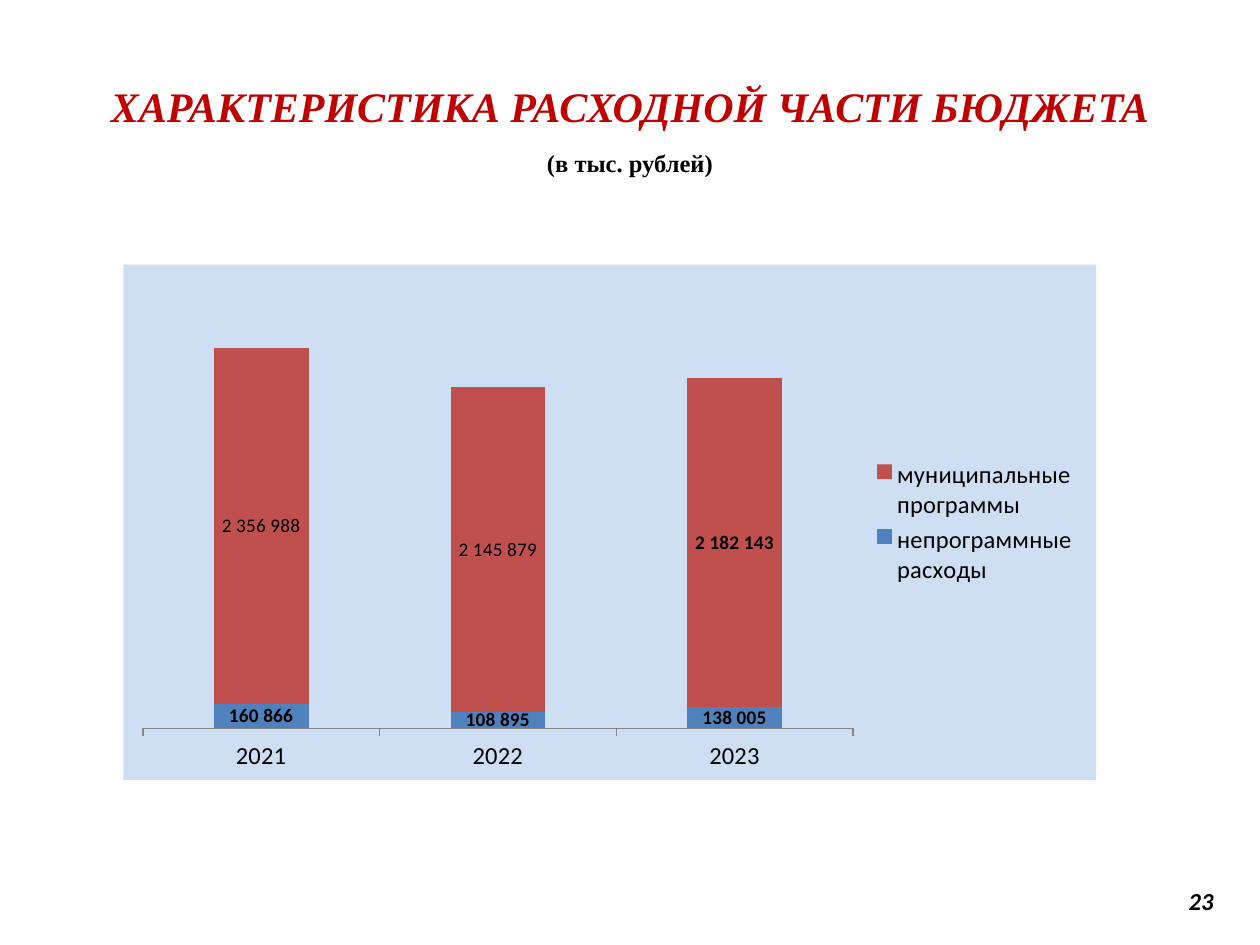
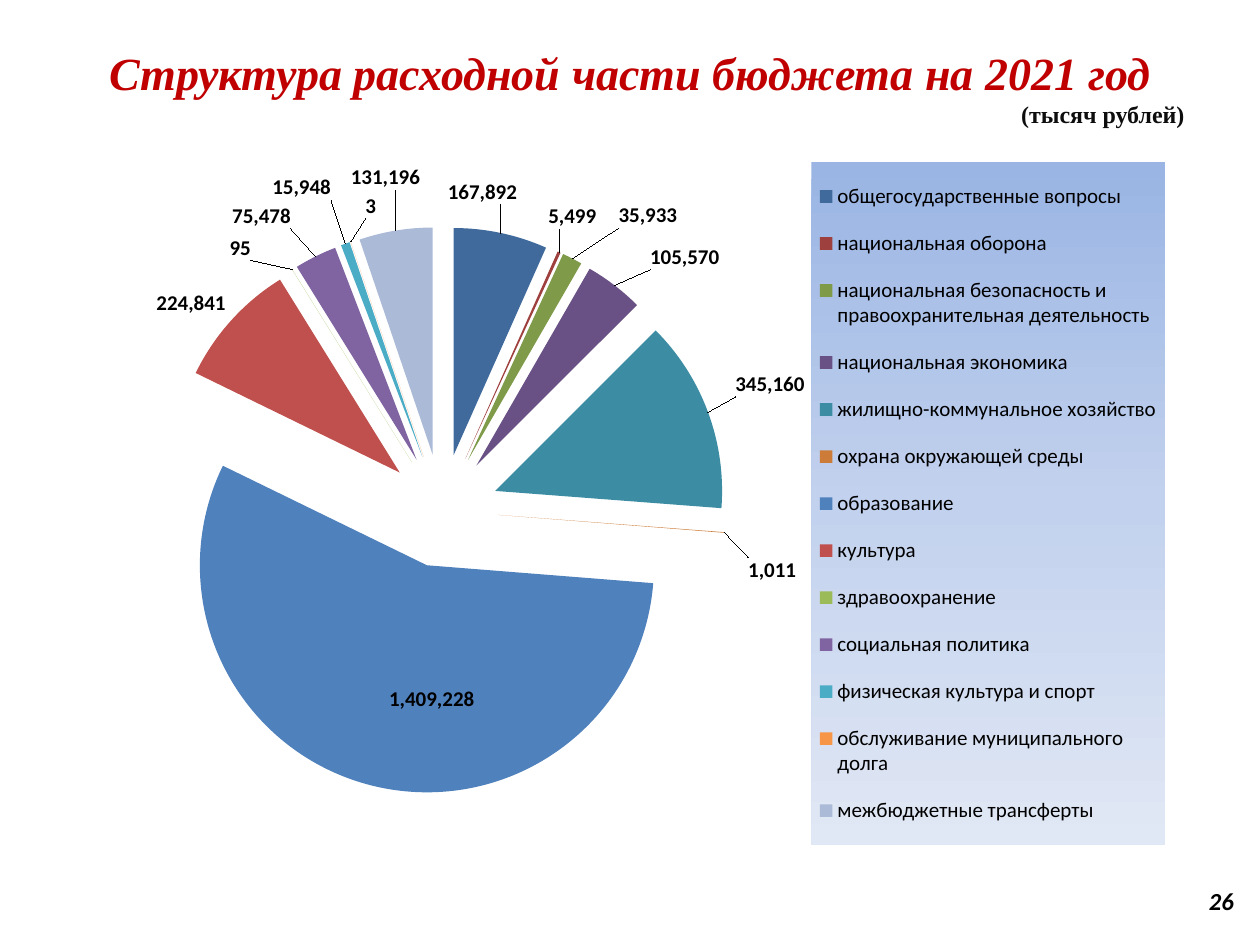
from dataclasses import dataclass
from typing import NamedTuple

import pptx
import pptx.chart.data
import pptx.dml.color
import pptx.enum.chart
import pptx.enum.text
import pptx.oxml
import pptx.oxml.ns
import pptx.util
from pptx.util import Inches

Align = pptx.enum.text.PP_ALIGN
Anchor = pptx.enum.text.MSO_ANCHOR
ChartType = pptx.enum.chart.XL_CHART_TYPE
LabelPosition = pptx.enum.chart.XL_LABEL_POSITION


@dataclass(frozen=True)
class Theme:
    heading_font: str = "Times New Roman"
    body_font: str = "Calibri"
    title: str = "C00000"
    text: str = "000000"
    soft_text: str = "0D0D0D"
    axis: str = "868686"
    blue: str = "4F81BD"
    red: str = "C0504D"
    panel: str = "8EB4E3"
    panel_opacity: int = 42
    legend_gradient: tuple[str, ...] = ("9AB5E4", "C2D1ED", "E1E8F5")
    small: float = 11
    label: float = 12
    body: float = 14


THEME = Theme()


class Box(NamedTuple):
    left: float
    top: float
    width: float
    height: float

    def inches(self) -> list[int]:
        return [Inches(length) for length in self]


class Line(NamedTuple):
    text: str
    size: float
    color: str
    font: str = THEME.heading_font
    italic: bool = True
    align: Align = Align.CENTER
    space_before: float = 0


class Expense(NamedTuple):
    """A budget section; shift moves its label right and down, in inches."""
    name: str
    amount: int
    color: str
    shift: tuple[float, float]


class Spending(NamedTuple):
    name: str
    color: str
    amounts: tuple[int, ...]
    bold_years: tuple[str, ...]


YEARS = ("2021", "2022", "2023")
SPENDING = (
    Spending("непрограммные расходы", THEME.blue, (160866, 108895, 138005), YEARS),
    Spending("муниципальные программы", THEME.red, (2356988, 2145879, 2182143), ("2023",)),
)
EXPENSES = (
    Expense("общегосударственные вопросы", 167892, "406A9C", (-0.43, -0.17)),
    Expense("национальная оборона", 5499, "9E413E", (-0.11, -0.13)),
    Expense("национальная безопасность и правоохранительная деятельность",
            35933, "7F9A48", (0.34, -0.19)),
    Expense("национальная экономика", 105570, "695185", (0.25, -0.08)),
    Expense("жилищно-коммунальное хозяйство", 345160, "3C8DA3", (0.16, -0.1)),
    Expense("охрана окружающей среды", 1011, "CC7B38", (0.13, 0.29)),
    Expense("образование", 1409228, THEME.blue, (0.87, -0.83)),
    Expense("культура", 224841, THEME.red, (0, 0)),
    Expense("здравоохранение", 95, "9BBB59", (-0.3, -0.02)),
    Expense("социальная политика", 75478, "8064A2", (-0.17, -0.17)),
    Expense("физическая культура и спорт", 15948, "4BACC6", (-0.09, -0.29)),
    Expense("обслуживание муниципального долга", 3, "F79646", (0.22, -0.13)),
    Expense("межбюджетные трансферты", 131196, "AABAD7", (0.2, -0.26)),
)


def rgb(color: str) -> pptx.dml.color.RGBColor:
    return pptx.dml.color.RGBColor.from_string(color)


def style_font(font, size: float, color: str = THEME.text, name: str = THEME.body_font,
               bold: bool = False, italic: bool = False) -> None:
    font.name, font.size = name, pptx.util.Pt(size)
    font.bold, font.italic = bold, italic
    font.color.rgb = rgb(color)


def add_lines(slide, box: Box, lines: list[Line], anchor: Anchor = Anchor.MIDDLE) -> None:
    frame = slide.shapes.add_textbox(*box.inches()).text_frame
    frame.word_wrap = True
    frame.vertical_anchor = anchor
    frame.text = "\n".join(line.text for line in lines)
    for paragraph, line in zip(frame.paragraphs, lines):
        paragraph.alignment = line.align
        if line.space_before:
            paragraph.space_before = pptx.util.Pt(line.space_before)
        for run in paragraph.runs:
            style_font(run.font, line.size, line.color, line.font, True, line.italic)


def add_page_number(slide, number: int, width: float) -> None:
    add_lines(slide, Box(7.17, 6.95, width, 0.4),
              [Line(str(number), THEME.body, THEME.text, THEME.body_font, align=Align.RIGHT)])


def chart_xml(tag: str, content: str):
    namespaces = pptx.oxml.ns.nsdecls("c", "a")
    return pptx.oxml.parse_xml(f"<c:{tag} {namespaces}>{content}</c:{tag}>")


def manual_layout(box: Box, inner: bool = False):
    """Place a chart part by fractions of the chart's size."""
    target = '<c:layoutTarget val="inner"/>' if inner else ""
    sizes = "".join(f'<c:{key} val="{value}"/>' for key, value in zip("xywh", box))
    return chart_xml("layout", "<c:manualLayout>" + target
                     + '<c:xMode val="edge"/><c:yMode val="edge"/>'
                     + sizes + "</c:manualLayout>")


def add_budget_chart(slide, kind: ChartType, box: Box, data, plot: Box, legend: Box,
                     legend_size: float):
    chart = slide.shapes.add_chart(kind, *box.inches(), data).chart
    style_font(chart.font, 18)
    chart.has_title = False
    chart.has_legend = True
    chart.legend.position = pptx.enum.chart.XL_LEGEND_POSITION.RIGHT
    chart.legend.include_in_layout = False
    style_font(chart.legend.font, legend_size)
    plot_area = chart.element.xpath("c:chart/c:plotArea")[0]
    for layout in plot_area.xpath("c:layout"):
        plot_area.remove(layout)
    plot_area.insert(0, manual_layout(plot, inner=True))
    for layout in chart.element.xpath("c:chart/c:legend/c:layout"):
        layout.getparent().remove(layout)
    chart.element.xpath("c:chart/c:legend/c:overlay")[0].addprevious(manual_layout(legend))
    return chart


def add_spending_chart(slide) -> None:
    data = pptx.chart.data.CategoryChartData(number_format="#,##0")
    data.categories = YEARS
    for spending in SPENDING:
        data.add_series(spending.name, spending.amounts)
    chart = add_budget_chart(slide, ChartType.COLUMN_STACKED, Box(0.98, 2.1, 7.72, 4.09), data,
                             Box(0.02, 0.02, 0.73, 0.88), Box(0.76, 0.37, 0.23, 0.26),
                             THEME.body)
    chart.element.xpath("c:chart")[0].addnext(chart_xml(
        "spPr", f'<a:solidFill><a:srgbClr val="{THEME.panel}">'
                f'<a:alpha val="{THEME.panel_opacity * 1000}"/></a:srgbClr></a:solidFill>'
                '<a:ln><a:noFill/></a:ln>'))

    years, amounts = chart.category_axis, chart.value_axis
    years.major_tick_mark = pptx.enum.chart.XL_TICK_MARK.OUTSIDE
    years.format.line.color.rgb = rgb(THEME.axis)
    style_font(years.tick_labels.font, THEME.body)
    amounts.visible = False
    amounts.has_major_gridlines = False
    amounts.minimum_scale, amounts.maximum_scale = 0, 3000000

    columns = chart.plots[0]
    columns.gap_width, columns.overlap = 150, 100
    columns.vary_by_categories = False
    for series, spending in zip(columns.series, SPENDING):
        series.format.fill.solid()
        series.format.fill.fore_color.rgb = rgb(spending.color)
        series.data_labels.show_value = True
        series.data_labels.position = LabelPosition.CENTER
        style_font(series.data_labels.font, THEME.small, bold=True)
        for index, (year, amount) in enumerate(zip(YEARS, spending.amounts)):
            label = series.points[index].data_label
            label.text_frame.text = f"{amount:,}".replace(",", " ")
            label.position = LabelPosition.CENTER
            style_font(label.text_frame.paragraphs[0].runs[0].font, THEME.small,
                       bold=year in spending.bold_years)


def add_structure_chart(slide) -> None:
    box = Box(0.83, 1.23, 8.5, 5.59)
    data = pptx.chart.data.CategoryChartData(number_format="#,##0")
    data.categories = [expense.name for expense in EXPENSES]
    data.add_series("Series 1", [expense.amount for expense in EXPENSES])
    chart = add_budget_chart(slide, ChartType.PIE, box, data, Box(0.05, 0.1, 0.53, 0.81),
                             Box(0.66, 0.01, 0.33, 0.97), THEME.label)
    stops = "".join(f'<a:gs pos="{step * 50000}"><a:srgbClr val="{color}"/></a:gs>'
                    for step, color in enumerate(THEME.legend_gradient))
    chart.element.xpath("c:chart/c:legend/c:overlay")[0].addnext(chart_xml(
        "spPr", f'<a:gradFill><a:gsLst>{stops}</a:gsLst>'
                '<a:lin ang="5400000" scaled="0"/></a:gradFill>'))

    pie = chart.plots[0]
    pie.vary_by_categories = True
    series = pie.series[0]
    labels = series.data_labels
    labels.show_value = True
    labels.number_format, labels.number_format_is_linked = "#,##0", False
    labels.position = LabelPosition.OUTSIDE_END
    style_font(labels.font, THEME.label, bold=True)
    for index, expense in enumerate(EXPENSES):
        point = series.points[index]
        point.format.fill.solid()
        point.format.fill.fore_color.rgb = rgb(expense.color)
        point.data_label.position = LabelPosition.OUTSIDE_END
        style_font(point.data_label.font, THEME.label, bold=True)

    explosion = pptx.oxml.parse_xml(
        f'<c:explosion {pptx.oxml.ns.nsdecls("c")} val="25"/>')
    chart.element.xpath(".//c:ser/c:tx")[0].addnext(explosion)
    for number, expense in zip(chart.element.xpath(".//c:dLbl/c:idx"), EXPENSES):
        right, down = expense.shift
        if right or down:
            number.addnext(chart_xml(
                "layout", f'<c:manualLayout><c:x val="{right / box.width:.3f}"/>'
                          f'<c:y val="{down / box.height:.3f}"/></c:manualLayout>'))


def build_spending_slide(slide) -> None:
    add_lines(slide, Box(0, 0.08, 10, 1.38), [
        Line("ХАРАКТЕРИСТИКА РАСХОДНОЙ ЧАСТИ БЮДЖЕТА", 24, THEME.title),
        Line("(в тыс. рублей)", THEME.body, THEME.text, italic=False, space_before=10),
    ], Anchor.BOTTOM)
    add_page_number(slide, 23, 2.56)
    add_spending_chart(slide)


def build_structure_slide(slide) -> None:
    add_page_number(slide, 26, 2.72)
    add_lines(slide, Box(0.5, 0.3, 9, 0.77), [
        Line("Структура расходной части бюджета на 2021 год", 26.3, THEME.title),
        Line("(тысяч рублей)", 13.7, THEME.soft_text, italic=False, align=Align.RIGHT),
    ])
    add_structure_chart(slide)


def main() -> None:
    deck = pptx.Presentation()
    deck.slide_width, deck.slide_height = Inches(10), Inches(7.5)
    for build in (build_spending_slide, build_structure_slide):
        build(deck.slides.add_slide(deck.slide_layouts[6]))
    deck.save("out.pptx")


if __name__ == "__main__":
    main()
